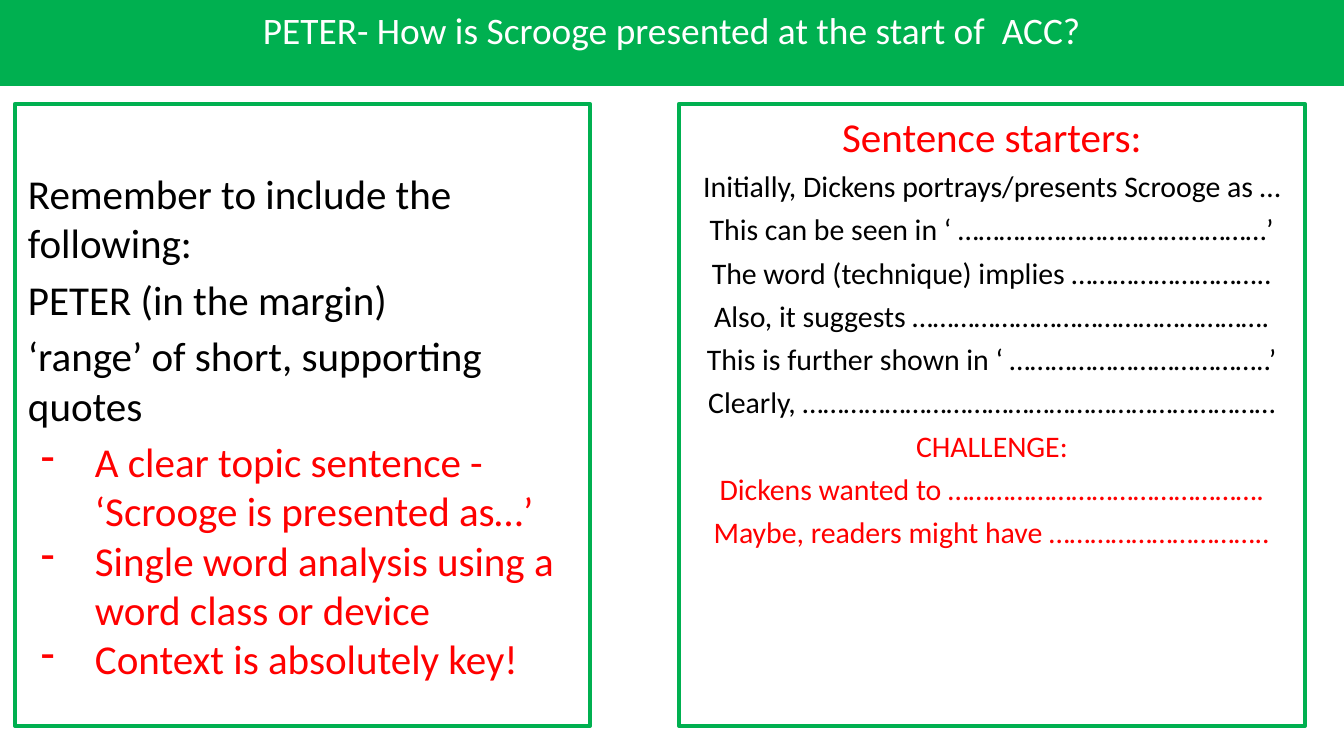
from lxml import etree
from pptx import Presentation
from pptx.dml.color import RGBColor
from pptx.enum.shapes import MSO_SHAPE
from pptx.enum.text import MSO_ANCHOR, PP_ALIGN
from pptx.oxml.ns import qn
from pptx.util import Emu, Pt

FONT = "Calibri"
GREEN, WHITE, RED, BLACK = "00B050", "FFFFFF", "FF0000", "000000"
LEFT, CENTER = PP_ALIGN.LEFT, PP_ALIGN.CENTER

# Content: groups of (size, colour, alignment, bulleted, lines)
title = [
    (20, WHITE, CENTER, False, ["PETER- How is Scrooge presented at the start of  ACC?"]),
]
reminders = [
    (22, BLACK, LEFT, False, [
        "Remember to include the following:",
        "PETER (in the margin)",
        "‘range’ of short, supporting quotes",
    ]),
    (22, RED, LEFT, True, [
        "A clear topic sentence - ‘Scrooge is presented as…’",
        "Single word analysis using a word class or device",
        "Context is absolutely key!",
    ]),
]
starters = [
    (22, RED, CENTER, False, ["Sentence starters:"]),
    (16, BLACK, CENTER, False, [
        "Initially, Dickens portrays/presents Scrooge as …",
        "This can be seen in ‘ ………………………………………’",
        "The word (technique) implies ………………………..",
        "Also, it suggests …………………………………………….",
        "This is further shown in ‘ ………………………………..’",
        "Clearly, ……………………………………………………………",
    ]),
    (16, RED, CENTER, False, [
        "CHALLENGE:",
        "Dickens wanted to ……………………………………….",
        "Maybe, readers might have …………………………..",
    ]),
]

# Boxes: left, top, width, height, top inset, fill, line, content
boxes = [
    (0, 0, 1344, 86, 7, GREEN, None, title),
    (15, 104, 575, 622, 64, WHITE, GREEN, reminders),
    (679, 104, 626, 622, 7, WHITE, GREEN, starters),
]


def px(n):
    return Emu(round(n * 914400 / 134.4))


def rgb(color):
    return RGBColor.from_string(color)


def add_bullet(p, color):
    pPr = p._p.get_or_add_pPr()
    pPr.set("marL", str(px(67)))
    pPr.set("indent", str(px(-54)))
    clr = etree.SubElement(pPr, qn("a:buClr"))
    etree.SubElement(clr, qn("a:srgbClr"), val=color)
    etree.SubElement(pPr, qn("a:buChar"), char="-")


def add_text(tf, groups):
    p = None
    for size, color, align, bulleted, lines in groups:
        for i, line in enumerate(lines):
            first = p is None
            p = tf.paragraphs[0] if first else tf.add_paragraph()
            p.alignment = align
            # Bullets after the first sit close together
            tight = first or (bulleted and i > 0)
            p.space_before = Pt(0 if tight else 4)
            if bulleted:
                add_bullet(p, color)
            r = p.add_run()
            r.text = line
            r.font.name = FONT
            r.font.size = Pt(size)
            r.font.color.rgb = rgb(color)


def add_box(slide, x, y, w, h, inset, fill, line, groups):
    sp = slide.shapes.add_shape(MSO_SHAPE.RECTANGLE, px(x), px(y), px(w), px(h))
    sp.shadow.inherit = False
    sp.fill.solid()
    sp.fill.fore_color.rgb = rgb(fill)
    if line:
        sp.line.color.rgb = rgb(line)
        sp.line.width = Pt(2.25)
    else:
        sp.line.fill.background()
    tf = sp.text_frame
    tf.word_wrap = True
    tf.vertical_anchor = MSO_ANCHOR.TOP
    tf.margin_left = tf.margin_right = px(13)
    tf.margin_top, tf.margin_bottom = px(inset), px(7)
    add_text(tf, groups)


prs = Presentation()
prs.slide_width, prs.slide_height = px(1344), px(756)
slide = prs.slides.add_slide(prs.slide_layouts[6])

# Title bar and the two panels
for box in boxes:
    add_box(slide, *box)

prs.save("out.pptx")
